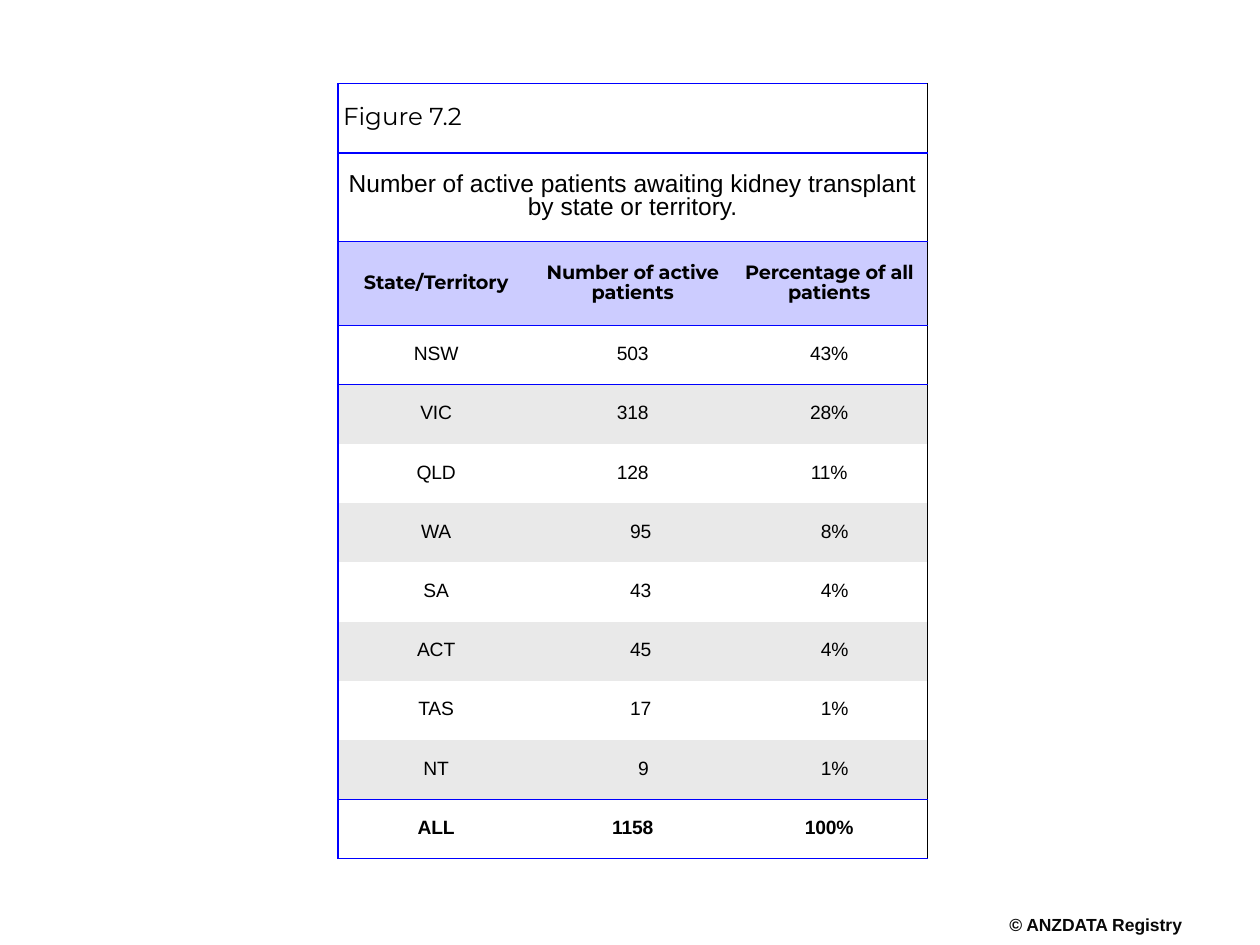
from lxml import etree
from pptx import Presentation
from pptx.dml.color import RGBColor
from pptx.enum import text
from pptx.util import Pt
from pptx.oxml.ns import qn

ALIGN = text.PP_ALIGN


def write(frame, words, size=11, font="Arial", color="000000", bold=False,
          align=ALIGN.CENTER, track=0):
    para = frame.paragraphs[0]
    para.alignment = align
    para.line_spacing = 0.85
    run = para.add_run()
    run.text = words
    run.font.size = Pt(size)
    run.font.name = font
    run.font.bold = bold
    run.font.color.rgb = RGBColor.from_string(color)
    if track:
        run._r.get_or_add_rPr().set("spc", str(track))


def style(cell, fill, edges, left=3, top=3):
    cell.vertical_anchor = text.MSO_ANCHOR.MIDDLE
    cell.margin_left, cell.margin_right = Pt(left), Pt(3)
    cell.margin_top = cell.margin_bottom = Pt(top)
    props = cell._tc.get_or_add_tcPr()
    for side in "LRTB":
        if side in edges:
            color, width = ("000000", 0.5) if side == "R" else ("0000FF", 1)
            line = etree.SubElement(props, qn(f"a:ln{side}"), w=str(Pt(width)))
            solid = etree.SubElement(line, qn("a:solidFill"))
            etree.SubElement(solid, qn("a:srgbClr"), val=color)
    if fill:
        cell.fill.solid()
        cell.fill.fore_color.rgb = RGBColor.from_string(fill)
    else:
        cell.fill.background()


prs = Presentation()
prs.slide_width, prs.slide_height = Pt(720), Pt(540)
slide = prs.slides.add_slide(prs.slide_layouts[6])

box = slide.shapes.add_textbox(Pt(575.3), Pt(524.2), Pt(101.5), Pt(12.2))
frame = box.text_frame
frame.margin_left = frame.margin_right = frame.margin_top = frame.margin_bottom = 0
frame.word_wrap = False
write(frame, "© ANZDATA Registry", size=10, color="080808", bold=True)

states = [
    ("NSW", "503", "43%"),
    ("VIC", "318", "28%"),
    ("QLD", "128", "11%"),
    ("WA", "95", "8%"),
    ("SA", "43", "4%"),
    ("ACT", "45", "4%"),
    ("TAS", "17", "1%"),
    ("NT", "9", "1%"),
    ("ALL", "1158", "100%"),
]
pads = {"9": 12.2, "8%": 6.1, "4%": 6.1, "1%": 6.1,
        "95": 9.2, "43": 9.2, "45": 9.2, "17": 9.2}
heads = ["State/Territory", "Number of active patients", "Percentage of all patients"]
highs = [39.6, 50.6, 48] + [33.86] * len(states)

grid = slide.shapes.add_table(len(highs), 3, Pt(193.1), Pt(47.8), Pt(337), Pt(sum(highs)))
table = grid.table
table.first_row = table.horz_banding = False
table._tbl.tblPr.find(qn("a:tableStyleId")).text = "{2D5ABB26-0587-4C30-8999-92F81FD0307C}"
for col in table.columns:
    col.width = Pt(112.33)
for row, high in zip(table.rows, highs):
    row.height = Pt(high)

titles = [
    ("Figure 7.2", "Montserrat", ALIGN.LEFT, 3),
    ("Number of active patients awaiting kidney transplant by state or territory.",
     "Arial", ALIGN.CENTER, 1.5),
]
for r, (words, font, align, top) in enumerate(titles):
    table.cell(r, 0).merge(table.cell(r, 2))
    for c in range(3):
        style(table.cell(r, c), "FFFFFF", "LRTB", top=top)
    write(table.cell(r, 0).text_frame, words, size=14, font=font, align=align)

sides = ["L", "", "R"]
for c, words in enumerate(heads):
    cell = table.cell(2, c)
    style(cell, "CCCCFF", sides[c] + "TB", top=1.5)
    write(cell.text_frame, words, font="Montserrat", bold=True, track=-10)

for i, state in enumerate(states):
    total = state[0] == "ALL"
    edges = "TB" if total else "T" if i == 0 else "B" if state[0] == "NT" else ""
    for c, words in enumerate(state):
        cell = table.cell(i + 3, c)
        style(cell, "E9E9E9" if i % 2 else None, sides[c] + edges,
              left=3 + pads.get(words, 0))
        write(cell.text_frame, words, bold=total, track=-10)

prs.save("out.pptx")
